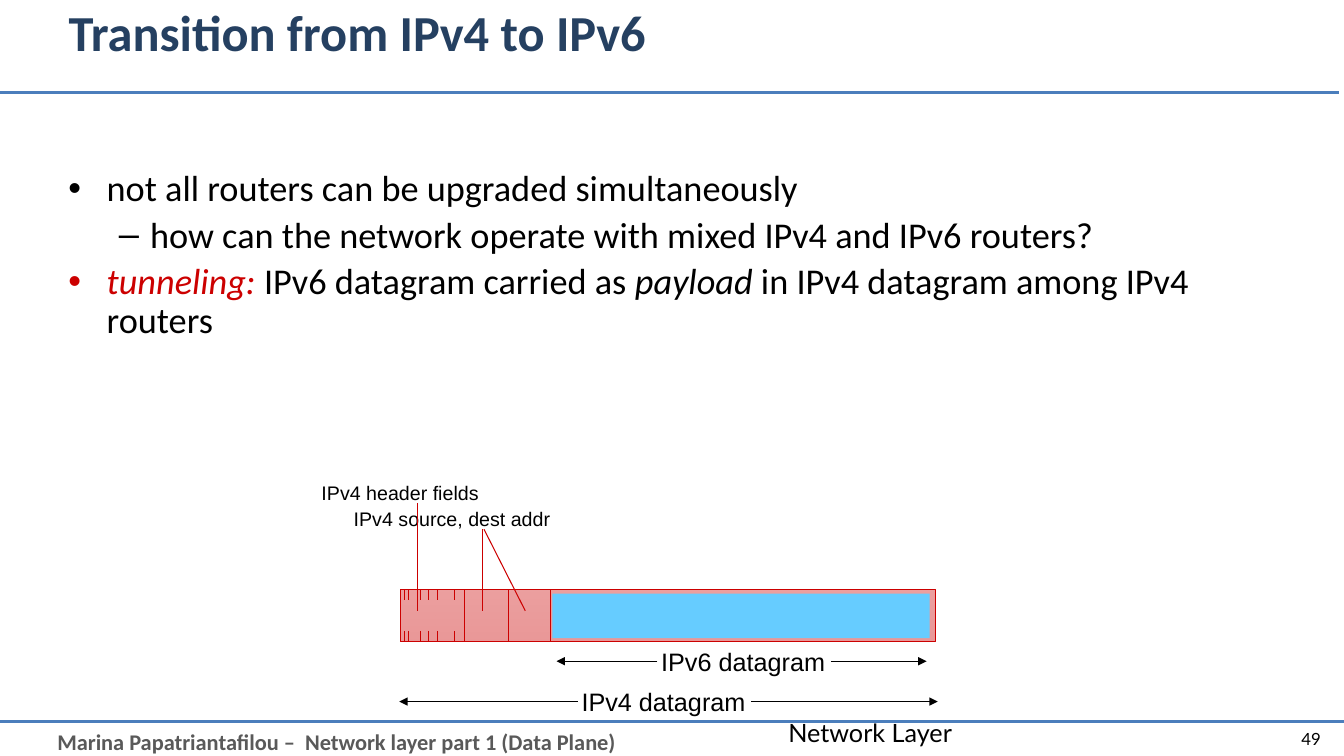
from collections import namedtuple
from dataclasses import dataclass

from lxml.etree import SubElement
from pptx import Presentation
from pptx.dml.color import RGBColor
from pptx.enum.shapes import MSO_CONNECTOR as CONNECTOR, MSO_SHAPE as SHAPE
from pptx.enum.text import MSO_ANCHOR as ANCHOR, PP_ALIGN as ALIGN
from pptx.oxml.ns import qn
from pptx.util import Inches, Pt

Box = namedtuple("Box", "left top width height")


@dataclass(frozen=True)
class Theme:
    """Colours, fonts and type sizes of the slide."""
    navy: str = "254061"
    rule: str = "4B7EBC"
    grey: str = "595959"
    black: str = "000000"
    red: str = "CC0000"
    sky: str = "66CCFF"
    main: str = "Calibri"
    label: str = "Arial"
    folio: str = "Lato"
    title_size: float = 36
    body_size: float = 25.9
    span_size: float = 18
    footer_size: float = 16
    note_size: float = 14
    number_size: float = 12


THEME = Theme()


def style(run, size, font, color, bold=False, italic=False):
    """Format one run."""
    run.font.size, run.font.name = Pt(size), font
    run.font.bold, run.font.italic = bold, italic
    run.font.color.rgb = RGBColor.from_string(color)


def add_label(slide, box, text, size, font, color=THEME.black, bold=False,
              wrap=False, align=ALIGN.LEFT, anchor=ANCHOR.TOP):
    """Add a single-line text box."""
    frame = slide.shapes.add_textbox(*map(Inches, box)).text_frame
    frame.word_wrap, frame.vertical_anchor = wrap, anchor
    frame.text = text
    frame.paragraphs[0].alignment = align
    style(frame.paragraphs[0].runs[0], size, font, color, bold)


def add_line(slide, start, end, color=THEME.red, width=0.75, arrow=False):
    """Draw a straight line, with an arrowhead at its end if asked."""
    line = slide.shapes.add_connector(
        CONNECTOR.STRAIGHT, *map(Inches, (*start, *end)))
    line.line.color.rgb = RGBColor.from_string(color)
    line.line.width = Pt(width)
    if arrow:
        SubElement(line.line._get_or_add_ln(), qn("a:tailEnd"), type="triangle")
    SubElement(line._element.spPr, qn("a:effectLst"))


def add_bar(slide, box):
    """Add a rectangle without shadow."""
    bar = slide.shapes.add_shape(SHAPE.RECTANGLE, *map(Inches, box))
    bar.shadow.inherit = False
    return bar


def build_title(slide, box):
    """Place the title and the rule below it."""
    title = slide.shapes.title
    title.left, title.top, title.width, title.height = map(Inches, box)
    frame = title.text_frame
    frame.text = "Transition from IPv4 to IPv6"
    frame.vertical_anchor = ANCHOR.MIDDLE
    frame.paragraphs[0].alignment = ALIGN.LEFT
    style(frame.paragraphs[0].runs[0], THEME.title_size, THEME.main, THEME.navy, True)
    rule_y = box.top + 0.92
    add_line(slide, (-0.05, rule_y), (13.28, rule_y), THEME.rule, 2.25)


def build_footer(slide, box):
    """Place the footer rule, lecture name, chapter and page number."""
    y = box.top
    add_line(slide, (box.left, y), (box.left + box.width, y), THEME.rule, 2.25)
    add_label(slide, Box(0.47, y + 0.01, 12.34, 0.37),
              "Marina Papatriantafilou –  Network layer part 1 (Data Plane)",
              THEME.footer_size, THEME.main, THEME.grey, bold=True, wrap=True)
    add_label(slide, Box(7.72, y - 0.09, 3.17, 0.31), "Network Layer",
              THEME.span_size, THEME.folio, wrap=True)
    add_label(slide, Box(12.13, y - 0.03, 1.07, 0.4), "49", THEME.number_size,
              THEME.folio, wrap=True, align=ALIGN.RIGHT, anchor=ANCHOR.MIDDLE)


def build_points(slide, box):
    """Write the bulleted points."""
    black, red = THEME.black, THEME.red
    points = [
        (0, [("not all routers can be upgraded simultaneously", black, False)]),
        (1, [("how can the network operate with mixed IPv4 and IPv6 routers?",
              black, False)]),
        (0, [("tunneling:", red, True),
             (" IPv6 datagram carried as ", black, False),
             ("payload", black, True),
             (" in IPv4 datagram among IPv4 routers", black, False)]),
    ]
    bullets = [("•", 0.38, 0.38), ("–", 0.81, 0.31)]
    frame = slide.shapes.add_textbox(*map(Inches, box)).text_frame
    frame.word_wrap = True
    for index, (level, parts) in enumerate(points):
        point = frame.add_paragraph() if index else frame.paragraphs[0]
        point.level, point.line_spacing = level, 0.9
        point.space_before = Pt(5.2)
        bullet, margin, hanging = bullets[level]
        props = point._p.get_or_add_pPr()
        props.set("marL", str(Inches(margin)))
        props.set("indent", str(-Inches(hanging)))
        SubElement(props, qn("a:buFont"), typeface=THEME.label)
        SubElement(props, qn("a:buChar"), char=bullet)
        for text, color, italic in parts:
            run = point.add_run()
            run.text = text
            style(run, THEME.body_size, THEME.main, color, italic=italic)


def build_packet(slide, box):
    """Draw the IPv4 datagram with its header fields and IPv6 payload."""
    left, top, bottom = box.left, box.top, box.top + box.height
    packet = add_bar(slide, box)
    packet.fill.gradient()
    packet.fill.gradient_angle = 90
    for stop, alpha in zip(packet.fill.gradient_stops, (41, 38)):
        stop.color.rgb = RGBColor.from_string(THEME.red)
    for color, alpha in zip(packet._element.spPr.iter(qn("a:srgbClr")), (41, 38)):
        SubElement(color, qn("a:alpha"), val=str(alpha * 1000))
    packet.line.color.rgb = RGBColor.from_string(THEME.red)
    packet.line.width = Pt(0.75)

    for x in (0.64, 1.07, 1.49):
        add_line(slide, (left + x, top), (left + x, bottom))
    for x in (0.04, 0.08, 0.2, 0.28, 0.37, 0.54):
        for y in (top, bottom - 0.1):
            add_line(slide, (left + x, y), (left + x, y + 0.1))

    payload = add_bar(slide, Box(left + 1.51, top + 0.04, 3.74, 0.44))
    payload.fill.solid()
    payload.fill.fore_color.rgb = RGBColor.from_string(THEME.sky)
    payload.line.fill.background()


def build_callouts(slide, box):
    """Name the header fields and point into the packet."""
    left, top = box.left, box.top
    for label_box, text in (
            (Box(left - 0.56, top - 0.87, 2.19, 0.33), "IPv4 source, dest addr"),
            (Box(left - 0.88, top - 1.13, 1.81, 0.33), "IPv4 header fields")):
        add_label(slide, label_box, text, THEME.note_size, THEME.label)
    for start_x, start_y, end_x in ((0.17, -0.86, 0.17), (0.82, -0.6, 0.82),
                                    (0.83, -0.6, 1.24)):
        add_line(slide, (left + start_x, top + start_y), (left + end_x, top + 0.21))


def build_span(slide, box, text, label_left, label_width):
    """Mark a horizontal extent with a label between two outward arrows."""
    y = box.top + box.height / 2
    add_label(slide, Box(label_left, box.top, label_width, box.height), text,
              THEME.span_size, THEME.label)
    inner = (label_left + 0.06, label_left + label_width - 0.05)
    for start, end in zip(inner, (box.left, box.left + box.width)):
        add_line(slide, (start, y), (end, y), THEME.black, arrow=True)


def main():
    """Build the slide and save it."""
    deck = Presentation()
    deck.slide_width, deck.slide_height = Inches(13.33), Inches(7.5)
    slide = deck.slides.add_slide(deck.slide_layouts[5])
    packet = Box(3.97, 5.85, 5.31, 0.51)
    build_footer(slide, Box(0, 7.16, 13.33, 0.34))
    build_title(slide, Box(0.58, 0, 11.98, 0.63))
    build_points(slide, Box(0.58, 1.64, 11.81, 1.87))
    build_packet(slide, packet)
    build_callouts(slide, packet)
    build_span(slide, Box(3.96, 6.76, 5.34, 0.4), "IPv4 datagram", 5.67, 1.83)
    build_span(slide, Box(5.52, 6.36, 3.67, 0.4), "IPv6 datagram", 6.46, 1.83)
    deck.save("out.pptx")


if __name__ == "__main__":
    main()
